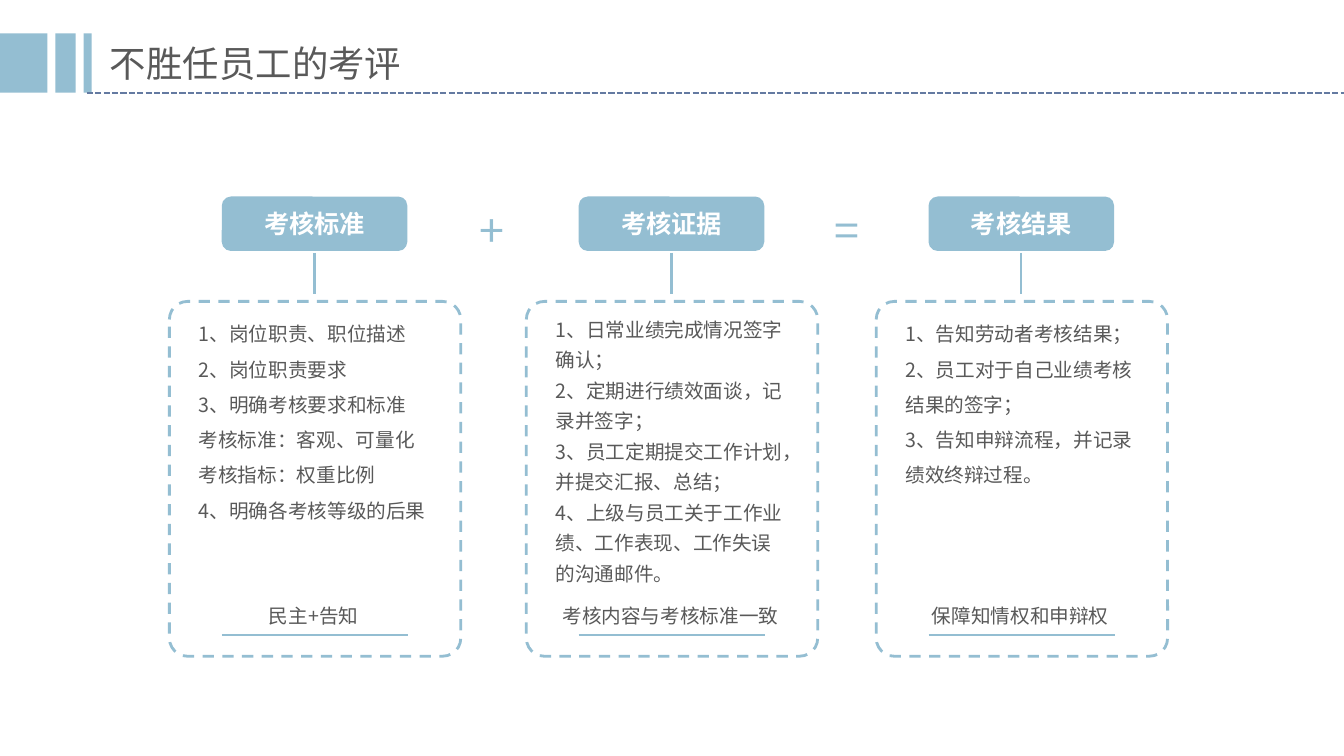
from lxml import etree
from pptx import Presentation
from pptx.dml.color import RGBColor
from pptx.enum.dml import MSO_LINE
from pptx.enum.shapes import MSO_CONNECTOR, MSO_SHAPE
from pptx.enum.text import MSO_ANCHOR, MSO_AUTO_SIZE, PP_ALIGN
from pptx.oxml.ns import qn
from pptx.util import Inches, Pt

RECTANGLE, ROUNDED = MSO_SHAPE.RECTANGLE, MSO_SHAPE.ROUNDED_RECTANGLE
STRAIGHT = MSO_CONNECTOR.STRAIGHT
DASH, SHORT_DASH = MSO_LINE.DASH, MSO_LINE.SQUARE_DOT
LEFT, CENTER = PP_ALIGN.LEFT, PP_ALIGN.CENTER
TOP, MIDDLE = MSO_ANCHOR.TOP, MSO_ANCHOR.MIDDLE
NO_AUTOFIT = MSO_AUTO_SIZE.NONE

FONT = "Noto Sans CJK SC"
COLORS = {"accent": "94BED2", "rule": "647AA1", "text": "595959", "white": "FFFFFF"}

COLUMNS = [
    {
        "left": 1.68, "heading": "考核标准", "spacing": 1.5, "list_height": 2.22,
        "items": ["1、岗位职责、职位描述", "2、岗位职责要求", "3、明确考核要求和标准",
                  "考核标准：客观、可量化", "考核指标：权重比例", "4、明确各考核等级的后果"],
        "caption": "民主+告知", "caption_width": 1.59,
    },
    {
        "left": 5.22, "heading": "考核证据", "spacing": 1.3, "list_height": 2.85,
        "items": ["1、日常业绩完成情况签字确认；", "2、定期进行绩效面谈，记录并签字；",
                  "3、员工定期提交工作计划，并提交汇报、总结；",
                  "4、上级与员工关于工作业绩、工作表现、工作失误的沟通邮件。"],
        "caption": "考核内容与考核标准一致", "caption_width": 2.42,
    },
    {
        "left": 8.69, "heading": "考核结果", "spacing": 1.5, "list_height": 1.87,
        "items": ["1、告知劳动者考核结果；", "2、员工对于自己业绩考核结果的签字；",
                  "3、告知申辩流程，并记录绩效终辩过程。"],
        "caption": "保障知情权和申辩权", "caption_width": 2.03,
    },
]


class SlideBuilder:
    """Draws styled elements on one slide."""

    def __init__(self, slide):
        self.slide = slide

    def color(self, name):
        return RGBColor.from_string(COLORS[name])

    def fill_text(self, shape, lines, size, color="text", align=LEFT, spacing=1.0,
                  bold=False, anchor=TOP):
        frame = shape.text_frame
        frame.text = "\n".join(lines)
        frame.word_wrap = True
        frame.auto_size = NO_AUTOFIT
        frame.vertical_anchor = anchor
        for paragraph in frame.paragraphs:
            paragraph.alignment = align
            paragraph.line_spacing = spacing
            paragraph.space_before = Pt(0)
            font = paragraph.font
            font.size, font.bold, font.name = Pt(size), bold, FONT
            font.color.rgb = self.color(color)
            properties = paragraph._p.get_or_add_pPr()
            properties.set("marL", "0")
            properties.set("indent", "0")
            defaults = properties.find(qn("a:defRPr"))
            defaults.addprevious(etree.Element(qn("a:buNone")))
            etree.SubElement(defaults, qn("a:ea"), typeface=FONT)

    def placeholder(self, index, box, lines, size, spacing):
        shape = self.slide.placeholders[index]
        shape.left, shape.top, shape.width, shape.height = map(Inches, box)
        self.fill_text(shape, lines, size, spacing=spacing)

    def text(self, box, content, size, color="text", spacing=1.0):
        shape = self.slide.shapes.add_textbox(*map(Inches, box))
        self.fill_text(shape, [content], size, color, CENTER, spacing)

    def block(self, kind, box):
        shape = self.slide.shapes.add_shape(kind, *map(Inches, box))
        shape.shadow.inherit = False
        shape.fill.solid()
        shape.fill.fore_color.rgb = self.color("accent")
        shape.line.fill.background()
        return shape

    def heading(self, box, content):
        shape = self.block(ROUNDED, box)
        self.fill_text(shape, [content], 18, "white", CENTER, bold=True, anchor=MIDDLE)

    def card(self, box):
        shape = self.block(ROUNDED, box)
        shape.adjustments[0] = 0.062
        shape.fill.background()
        shape.line.color.rgb = self.color("accent")
        shape.line.width = Pt(2)
        shape.line.dash_style = DASH

    def line(self, start, end, width, color="accent", dash=None):
        connector = self.slide.shapes.add_connector(STRAIGHT, *map(Inches, start + end))
        connector.line.color.rgb = self.color(color)
        connector.line.width = Pt(width)
        if dash:
            connector.line.dash_style = dash
        etree.SubElement(connector._element.spPr, qn("a:effectLst"))

    def column(self, index, data):
        left = data["left"]
        center = left + 1.44
        self.heading((left + 0.52, 1.95, 1.84, 0.54), data["heading"])
        self.card((left, 2.99, 2.89, 3.52))
        self.placeholder(index, (left + 0.19, 3.03, 2.5, data["list_height"]),
                         data["items"], 14, data["spacing"])
        self.line((left + 0.52, 6.3), (left + 2.37, 6.3), 1.25)
        width = data["caption_width"]
        self.text((center - 0.01 - width / 2, 5.83, width, 0.45),
                  data["caption"], 14, spacing=1.5)
        self.line((center, 2.51), (center, 2.92), 1.5)


def main():
    presentation = Presentation()
    presentation.slide_width = Inches(13.33)
    presentation.slide_height = Inches(7.5)
    slide = presentation.slides.add_slide(presentation.slide_layouts.get_by_name("Comparison"))
    builder = SlideBuilder(slide)

    for left, width in [(0, 0.47), (0.55, 0.2), (0.83, 0.08)]:
        builder.block(RECTANGLE, (left, 0.33, width, 0.59))
    builder.line((0.86, 0.92), (13.33, 0.92), 1.5, "rule", SHORT_DASH)
    builder.placeholder(0, (0.99, 0.27, 4.5, 0.62), ["不胜任员工的考评"], 26, 1.2)

    for index, data in enumerate(COLUMNS, start=1):
        builder.column(index, data)
    for left, sign in [(4.44, "+"), (7.96, "=")]:
        builder.text((left, 1.96, 0.88, 0.64), sign, 32, "accent")

    unused = slide.placeholders[4]._element
    unused.getparent().remove(unused)
    presentation.save("out.pptx")


if __name__ == "__main__":
    main()
